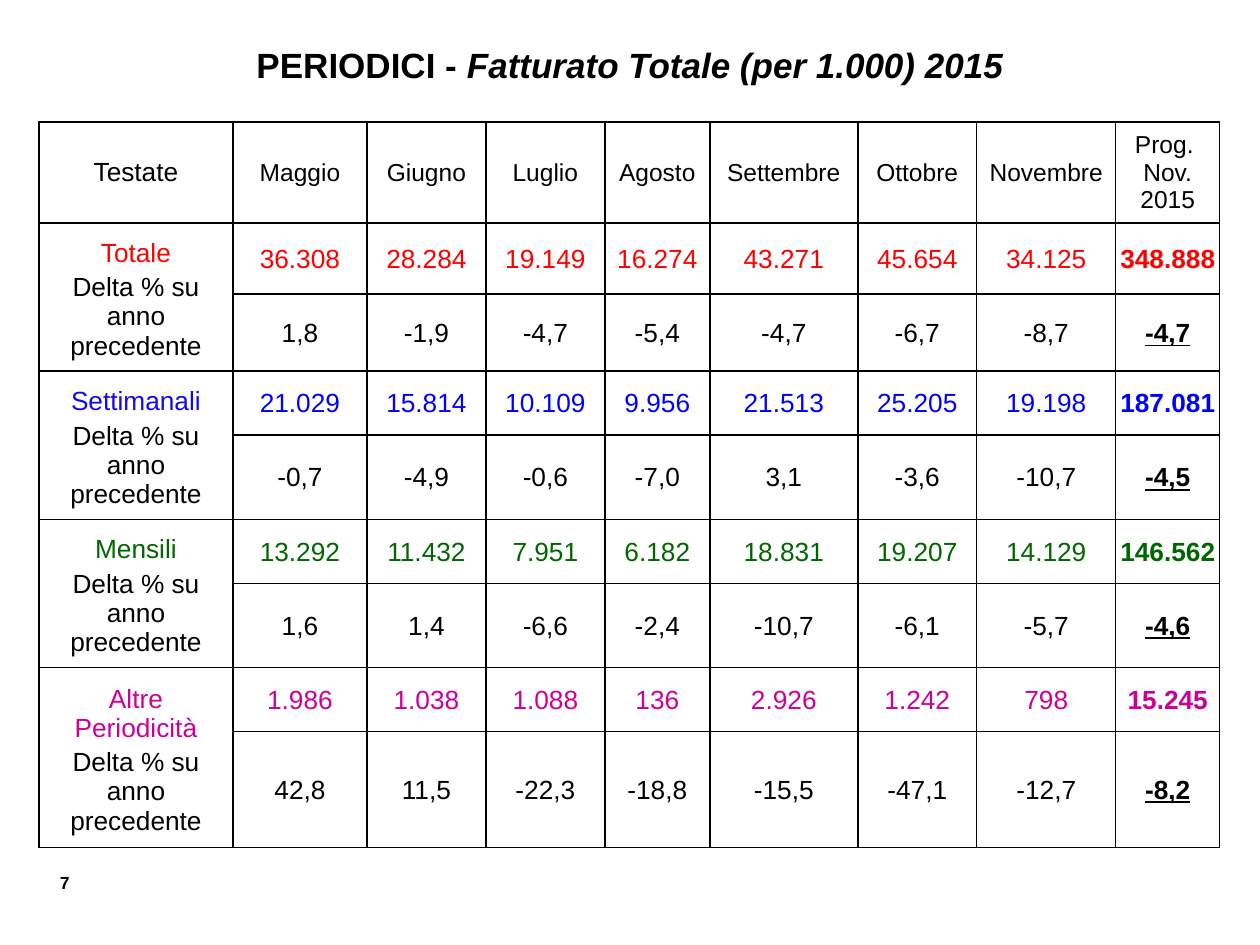
import pptx
import pptx.util
import pptx.dml.color
import pptx.enum.text
import pptx.oxml
import pptx.oxml.ns

EMU_PER_PX = 914400 / 126
ALIGN = pptx.enum.text.PP_ALIGN
BLACK = "000000"

MONTHS = ["Maggio", "Giugno", "Luglio", "Agosto", "Settembre", "Ottobre", "Novembre"]
COL_WIDTHS = [194, 134, 119, 119, 105, 148, 119, 139, 104]
ROW_HEIGHTS = [101, 71, 73, 64, 80, 64, 80, 64, 111]

# name, colour of name, colour of values, values, deltas
GROUPS = [
    ("Totale", "FF0000", "FF0000",
     ["36.308", "28.284", "19.149", "16.274", "43.271", "45.654", "34.125", "348.888"],
     ["1,8", "-1,9", "-4,7", "-5,4", "-4,7", "-6,7", "-8,7", "-4,7"]),
    ("Settimanali", "1409ED", "0000FF",
     ["21.029", "15.814", "10.109", "9.956", "21.513", "25.205", "19.198", "187.081"],
     ["-0,7", "-4,9", "-0,6", "-7,0", "3,1", "-3,6", "-10,7", "-4,5"]),
    ("Mensili", "006600", "006600",
     ["13.292", "11.432", "7.951", "6.182", "18.831", "19.207", "14.129", "146.562"],
     ["1,6", "1,4", "-6,6", "-2,4", "-10,7", "-6,1", "-5,7", "-4,6"]),
    ("Altre Periodicità", "CC0099", "CC0099",
     ["1.986", "1.038", "1.088", "136", "2.926", "1.242", "798", "15.245"],
     ["42,8", "11,5", "-22,3", "-18,8", "-15,5", "-47,1", "-12,7", "-8,2"]),
]


def px(n):
    return pptx.util.Emu(int(n * EMU_PER_PX))


def rgb(color):
    return pptx.dml.color.RGBColor.from_string(color)


def add_run(p, text, size=15, color=BLACK, bold=False, italic=False, underline=False):
    r = p.add_run()
    r.text = text
    r.font.name = "Arial"
    r.font.size = pptx.util.Pt(size)
    r.font.color.rgb = rgb(color)
    r.font.bold, r.font.italic, r.font.underline = bold, italic, underline


def add_text(s, box, align, runs):
    tb = s.shapes.add_textbox(*map(px, box))
    tf = tb.text_frame
    tf.word_wrap = True
    p = tf.paragraphs[0]
    p.alignment = align
    for text, fmt in runs:
        add_run(p, text, **fmt)


def style_cell(cell):
    tcPr = cell._tc.get_or_add_tcPr()
    for side in ("lnL", "lnR", "lnT", "lnB"):
        tcPr.append(pptx.oxml.parse_xml(
            f'<a:{side} {pptx.oxml.ns.nsdecls("a")} w="12700"><a:solidFill>'
            f'<a:srgbClr val="{BLACK}"/></a:solidFill></a:{side}>'))
    cell.fill.background()
    cell.vertical_anchor = pptx.enum.text.MSO_ANCHOR.MIDDLE


def fill_cell(cell, lines, margins, gap=0):
    """Write one paragraph for each (text, format) line; margins are left, top, right, bottom."""
    (cell.margin_left, cell.margin_top,
     cell.margin_right, cell.margin_bottom) = map(px, margins)
    tf = cell.text_frame
    for i, (text, fmt) in enumerate(lines):
        p = tf.add_paragraph() if i else tf.paragraphs[0]
        p.alignment = ALIGN.CENTER
        if i and gap:
            p.space_before = pptx.util.Pt(gap)
        add_run(p, text, **fmt)


def add_revenue_table(s, left, top):
    shape = s.shapes.add_table(len(ROW_HEIGHTS), len(COL_WIDTHS), px(left), px(top),
                               px(sum(COL_WIDTHS)), px(sum(ROW_HEIGHTS)))
    tbl = shape.table
    tbl.first_row = tbl.horz_banding = False
    for col, w in zip(tbl.columns, COL_WIDTHS):
        col.width = px(w)
    for row, h in zip(tbl.rows, ROW_HEIGHTS):
        row.height = px(h)
    for cell in tbl.iter_cells():
        style_cell(cell)

    # Header row
    fill_cell(tbl.cell(0, 0), [("Testate", {})], (6, 6, 6, 6))
    headers = [[m] for m in MONTHS] + [["Prog. ", "Nov.", "2015"]]
    for c, lines in enumerate(headers, 1):
        fill_cell(tbl.cell(0, c), [(t, {"size": 14}) for t in lines], (12, 6, 12, 6))

    # Two rows for each group: values, then change on the previous year
    for g, (name, name_color, color, values, deltas) in enumerate(GROUPS):
        r = 1 + 2 * g
        tbl.cell(r, 0).merge(tbl.cell(r + 1, 0))
        fill_cell(tbl.cell(r, 0),
                  [(name, {"color": name_color}), ("Delta % su anno precedente", {})],
                  (12, 11, 12, 6), gap=3)
        for c, (value, delta) in enumerate(zip(values, deltas), 1):
            last = c == len(values)
            fill_cell(tbl.cell(r, c), [(value, {"color": color, "bold": last})], (1, 1, 1, 0))
            fill_cell(tbl.cell(r + 1, c), [(delta, {"bold": last, "underline": last})],
                      (1, 1, 1, 0))


def main():
    prs = pptx.Presentation()
    prs.slide_width, prs.slide_height = px(1260), px(945)
    s = prs.slides.add_slide(prs.slide_layouts[6])

    # Page number, table, title
    add_text(s, (24, 866, 58, 34), ALIGN.RIGHT, [("7", {"size": 10, "bold": True})])
    add_revenue_table(s, 39, 122)
    add_text(s, (0, 37, 1260, 55), ALIGN.CENTER, [
        ("PERIODICI - ", {"size": 20, "bold": True}),
        ("Fatturato Totale (per 1.000) 2015", {"size": 20, "bold": True, "italic": True}),
    ])
    prs.save("out.pptx")


if __name__ == "__main__":
    main()
